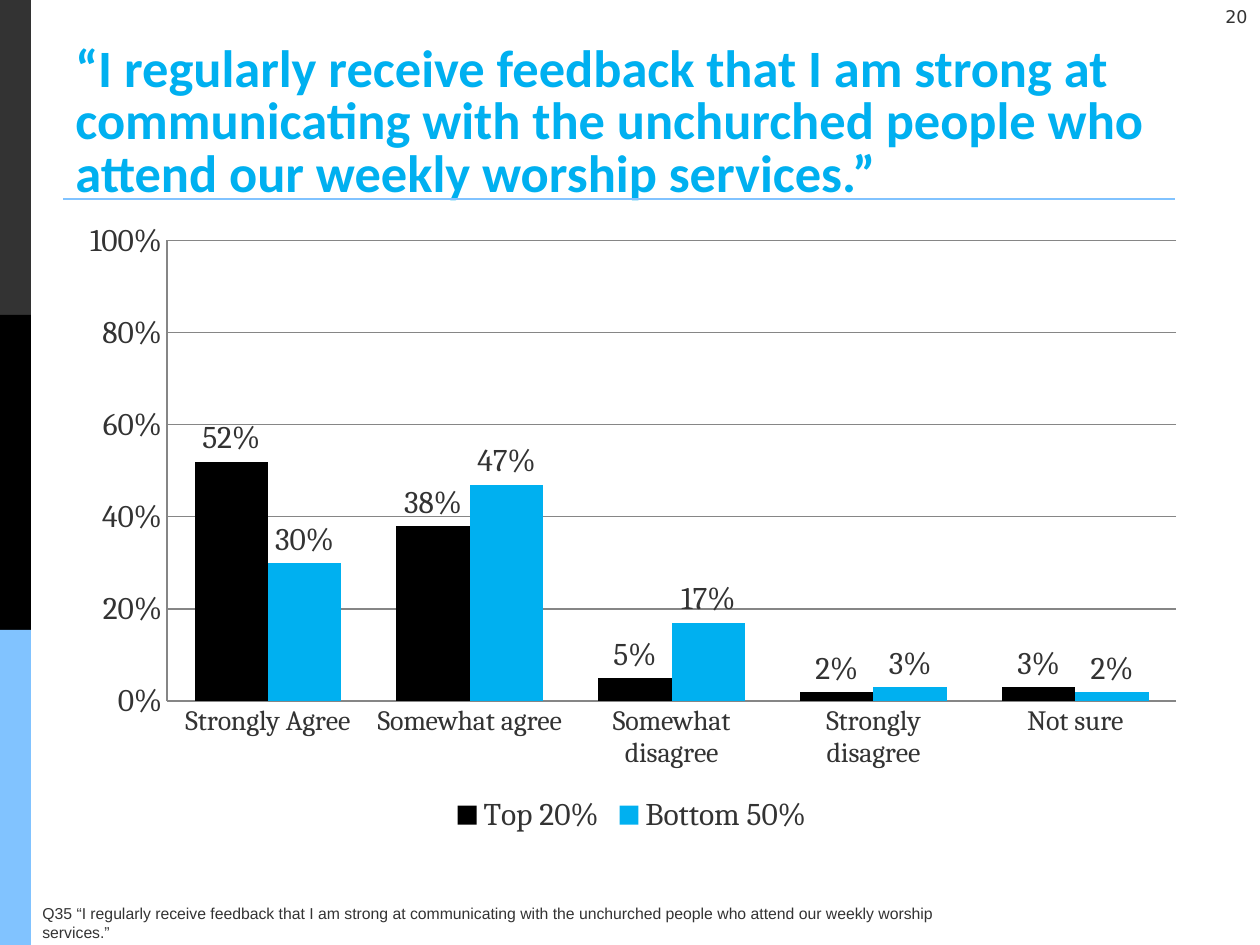
import dataclasses

import pptx
import pptx.chart.data
import pptx.dml.color
import pptx.enum.chart
import pptx.enum.shapes
import pptx.enum.text
import pptx.oxml
import pptx.oxml.ns
import pptx.util

WIDE, HIGH = 1260, 945
QUOTE = (
    "“I regularly receive feedback that I am strong at communicating with "
    "the unchurched people who attend our weekly worship services.”"
)
CATS = ["Strongly Agree", "Somewhat agree", "Somewhat disagree",
        "Strongly disagree", "Not sure"]
TOP = [0.52, 0.38, 0.05, 0.02, 0.03]
BOTTOM = [0.3, 0.47, 0.17, 0.03, 0.02]


@dataclasses.dataclass(frozen=True)
class Theme:
    ink: str = "333333"
    black: str = "000000"
    sky: str = "81C3FF"
    blue: str = "00B0F0"
    grid: str = "868686"
    title: int = 30
    chart: int = 18
    cats: int = 16
    page: int = 10
    note: int = 9


THEME = Theme()


def px(num):
    return round(num * 914400 / 126)


def rgb(code):
    return pptx.dml.color.RGBColor.from_string(code)


def style(font, name, size, color, bold=False):
    font.name = name
    font.size = pptx.util.Pt(size)
    font.color.rgb = rgb(color)
    font.bold = bold


def add_text(slide, box, text):
    """Add a wrapped text box; return its frame and first paragraph."""
    frame = slide.shapes.add_textbox(*map(px, box)).text_frame
    frame.word_wrap = True
    para = frame.paragraphs[0]
    para.text = text
    return frame, para


def add_strip(slide, box):
    """Stack equal colour blocks down the box."""
    left, top, width, height = box
    colors = [THEME.ink, THEME.black, THEME.sky]
    step = height // len(colors)
    for row, color in enumerate(colors):
        block = slide.shapes.add_shape(
            pptx.enum.shapes.MSO_SHAPE.RECTANGLE,
            *map(px, (left, top + row * step, width, step)))
        block.shadow.inherit = False
        block.fill.solid()
        block.fill.fore_color.rgb = rgb(color)
        block.line.fill.background()


def add_title(slide, box):
    """Set the heading at the foot of the box, with a rule below."""
    left, top, width, height = box
    frame, para = add_text(slide, box, QUOTE)
    frame.vertical_anchor = pptx.enum.text.MSO_ANCHOR.BOTTOM
    para.line_spacing = pptx.util.Pt(THEME.title)
    style(para.font, "Calibri", THEME.title, THEME.blue, True)
    base = top + height - 10
    rule = slide.shapes.add_connector(
        pptx.enum.shapes.MSO_CONNECTOR.STRAIGHT,
        *map(px, (left, base, left + width + 1, base)))
    rule.line.color.rgb = rgb(THEME.sky)
    rule.line.width = pptx.util.Pt(1.5)
    props = rule._element.spPr
    props.append(pptx.oxml.parse_xml(
        f"<a:effectLst {pptx.oxml.ns.nsdecls('a')}/>"))


def set_plot(chart, x, y, w, h):
    """Fix the inner plot area, in shares of the chart."""
    area = chart._chartSpace.chart.plotArea
    for old in area.findall(pptx.oxml.ns.qn("c:layout")):
        area.remove(old)
    parts = "".join(f'<c:{key} val="{val}"/>' for key, val in
                    zip("xywh", (x, y, w, h)))
    area.insert(0, pptx.oxml.parse_xml(
        f"<c:layout {pptx.oxml.ns.nsdecls('c')}><c:manualLayout>"
        '<c:layoutTarget val="inner"/><c:xMode val="edge"/>'
        f'<c:yMode val="edge"/>{parts}</c:manualLayout></c:layout>'))


def style_axes(chart):
    enum = pptx.enum.chart
    cats, vals = chart.category_axis, chart.value_axis
    for axis in (cats, vals):
        axis.major_tick_mark = enum.XL_TICK_MARK.NONE
        axis.minor_tick_mark = enum.XL_TICK_MARK.NONE
        axis.format.line.color.rgb = rgb(THEME.grid)
    style(cats.tick_labels.font, "Cambria", THEME.cats, THEME.ink)
    vals.minimum_scale, vals.maximum_scale = 0, 1
    vals.major_unit = 0.2
    vals.major_gridlines.format.line.color.rgb = rgb(THEME.grid)
    vals.tick_labels.number_format = "0%"
    vals.tick_labels.number_format_is_linked = False


def add_bars(slide, box):
    enum = pptx.enum.chart
    data = pptx.chart.data.CategoryChartData(number_format="0%")
    data.categories = CATS
    data.add_series("Top 20%", TOP)
    data.add_series("Bottom 50%", BOTTOM)
    chart = slide.shapes.add_chart(
        enum.XL_CHART_TYPE.COLUMN_CLUSTERED, *map(px, box), data).chart
    style(chart.font, "Cambria", THEME.chart, THEME.ink)
    chart.has_title = False
    chart.has_legend = True
    chart.legend.position = enum.XL_LEGEND_POSITION.BOTTOM
    chart.legend.include_in_layout = False
    set_plot(chart, 0.09, 0.05, 0.89, 0.73)
    style_axes(chart)
    plot = chart.plots[0]
    plot.gap_width, plot.overlap = 75, 0
    plot.vary_by_categories = False
    for series, color in zip(plot.series, (THEME.black, THEME.blue)):
        series.format.fill.solid()
        series.format.fill.fore_color.rgb = rgb(color)
        series.invert_if_negative = False
        labels = series.data_labels
        labels.show_value = True
        labels.number_format = "0%"
        labels.number_format_is_linked = False
        labels.position = enum.XL_LABEL_POSITION.OUTSIDE_END


def add_page(slide, box):
    para = add_text(slide, box, "20")[1]
    para.alignment = pptx.enum.text.PP_ALIGN.RIGHT
    style(para.font, "DejaVu Sans", THEME.page, THEME.ink)


def add_note(slide, box):
    para = add_text(slide, box, f"Q35 {QUOTE}")[1]
    style(para.font, "Arial", THEME.note, THEME.ink)


def main():
    deck = pptx.Presentation()
    deck.slide_width, deck.slide_height = px(WIDE), px(HIGH)
    slide = deck.slides.add_slide(deck.slide_layouts[6])
    add_strip(slide, (0, 0, 31, HIGH))
    add_page(slide, (1197, 0, 63, 42))
    add_note(slide, (30, 898, 942, 50))
    add_bars(slide, (65, 209, 1134, 631))
    add_title(slide, (63, 52, 1111, 157))
    deck.save("out.pptx")


if __name__ == "__main__":
    main()
